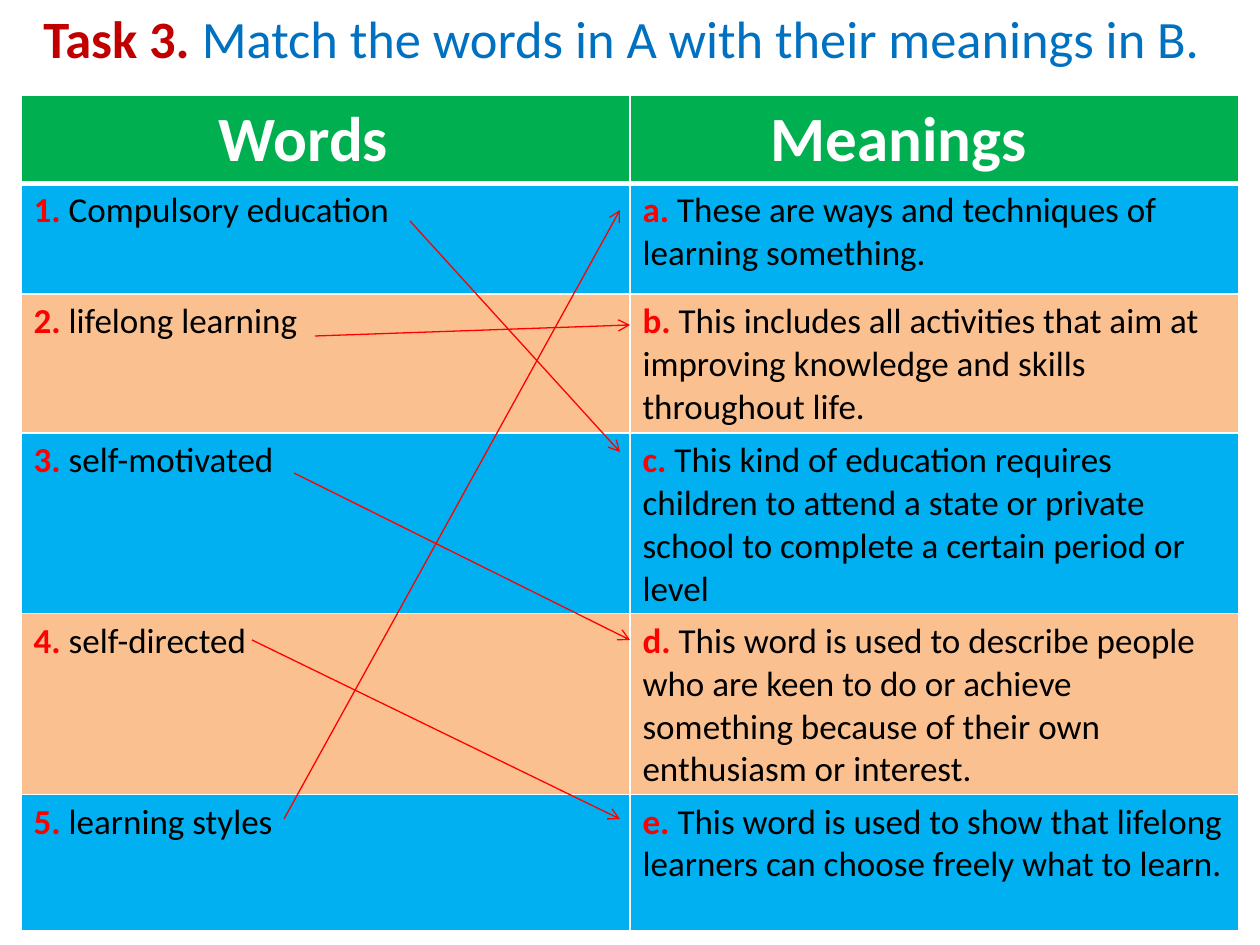
from lxml import etree
from pptx import Presentation
from pptx.dml.color import RGBColor
from pptx.enum.shapes import MSO_CONNECTOR
from pptx.enum.text import MSO_AUTO_SIZE
from pptx.oxml import parse_xml
from pptx.oxml.ns import nsdecls, qn
from pptx.util import Pt

STRAIGHT = MSO_CONNECTOR.STRAIGHT
FIT_SHAPE = MSO_AUTO_SIZE.SHAPE_TO_FIT_TEXT
EMU_PER_PX = 914400 / 126
FONT = "Calibri"
COLORS = {
    "task": "C00000", "title": "0070C0", "header": "00B050",
    "odd": "00B0F0", "even": "FAC090", "label": "FF0000",
    "text": "000000", "white": "FFFFFF", "arrow": "FF0000",
}

# Header text and its left margin
HEADERS = [("Words", 198), ("Meanings", 141)]
ROWS = [
    ("Compulsory education",
     "These are ways and techniques of learning something."),
    ("lifelong learning",
     "This includes all activities that aim at improving knowledge and "
     "skills throughout life."),
    ("self-motivated",
     "This kind of education requires children to attend a state or private "
     "school to complete a certain period or level"),
    ("self-directed",
     "This word is used to describe people who are keen to do or achieve "
     "something because of their own enthusiasm or interest."),
    ("learning styles",
     "This word is used to show that lifelong learners can choose freely "
     "what to learn."),
]
ROW_HEIGHTS = [84, 111, 136, 136, 136, 136]
MATCHES = [
    (410, 221, 620, 452),
    (315, 336, 630, 325),
    (294, 473, 630, 640),
    (252, 640, 620, 819),
    (284, 819, 620, 210),
]


def px(n):
    return round(n * EMU_PER_PX)


def rgb(name):
    return RGBColor.from_string(COLORS[name])


def add_run(p, text, size, color, bold=False):
    r = p.add_run()
    r.text = text
    r.font.name = FONT
    r.font.size = Pt(size)
    r.font.bold = bold
    r.font.color.rgb = rgb(color)


def add_title(slide):
    box = slide.shapes.add_textbox(px(31), 0, px(1197), px(77))
    tf = box.text_frame
    tf.word_wrap = True
    tf.auto_size = FIT_SHAPE
    p = tf.paragraphs[0]
    add_run(p, "Task 3. ", 30, "task", True)
    add_run(p, "Match the words in A with their meanings in B.", 30, "title")


def set_borders(cell, bottom=1):
    """Draw white cell borders, 1 pt except for the bottom one."""
    tcPr = cell._tc.get_or_add_tcPr()
    widths = {"lnL": 1, "lnR": 1, "lnT": 1, "lnB": bottom}
    for i, (tag, width) in enumerate(widths.items()):
        tcPr.insert(i, parse_xml(
            f'<a:{tag} {nsdecls("a")} w="{Pt(width)}"><a:solidFill>'
            f'<a:srgbClr val="{COLORS["white"]}"/></a:solidFill></a:{tag}>'))


def fill_cell(cell, color, bottom=1):
    cell.fill.solid()
    cell.fill.fore_color.rgb = rgb(color)
    set_borders(cell, bottom)


def add_matching_table(slide):
    frame = slide.shapes.add_table(
        len(ROW_HEIGHTS), len(HEADERS), px(21), px(95), px(1218), px(835))
    table = frame.table
    table.first_row = table.horz_banding = False
    for row, height in zip(table.rows, ROW_HEIGHTS):
        row.height = px(height)
    frame.height = px(835)

    for col, (text, margin) in enumerate(HEADERS):
        cell = table.cell(0, col)
        cell.margin_left = px(margin)
        fill_cell(cell, "header", bottom=3)
        add_run(cell.text_frame.paragraphs[0], text, 36, "white", True)

    for i, texts in enumerate(ROWS, start=1):
        for col, (label, text) in enumerate(zip((i, "abcde"[i - 1]), texts)):
            cell = table.cell(i, col)
            fill_cell(cell, "odd" if i % 2 else "even")
            p = cell.text_frame.paragraphs[0]
            add_run(p, f"{label}. ", 20, "label", True)
            add_run(p, text, 20, "text")
    for col in range(len(HEADERS)):
        first = table.cell(1, col)._tc.tcPr.find(qn("a:lnT"))
        first.set("w", str(Pt(3)))


def add_arrow(slide, x1, y1, x2, y2):
    line = slide.shapes.add_connector(STRAIGHT, px(x1), px(y1), px(x2), px(y2))
    line.line.color.rgb = rgb("arrow")
    line.line.width = Pt(0.75)
    etree.SubElement(line.line._get_or_add_ln(), qn("a:tailEnd"), type="arrow")
    etree.SubElement(line._element.spPr, qn("a:effectLst"))


def main():
    prs = Presentation()
    prs.slide_width, prs.slide_height = px(1260), px(945)
    slide = prs.slides.add_slide(prs.slide_layouts[6])
    add_title(slide)
    add_matching_table(slide)
    for match in MATCHES:
        add_arrow(slide, *match)
    prs.save("out.pptx")


if __name__ == "__main__":
    main()
